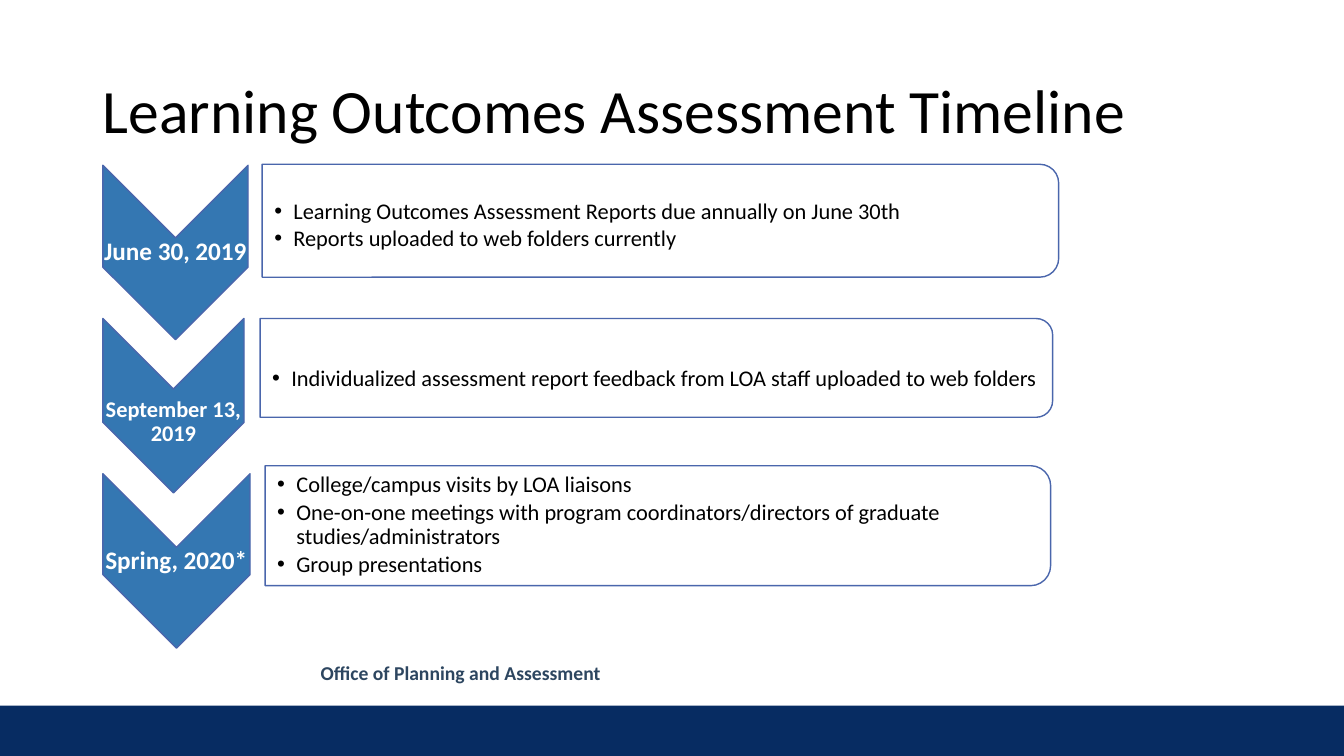
from lxml.etree import SubElement
from pptx import Presentation
from pptx.dml.color import RGBColor
from pptx.enum.shapes import MSO_SHAPE as Shape
from pptx.enum.text import MSO_ANCHOR as Anchor, PP_ALIGN as Align
from pptx.oxml.ns import qn
from pptx.util import Inches, Pt

TITLE = "Learning Outcomes Assessment Timeline"
OFFICE = "Office of Planning and Assessment"

# date, date size, date centre y, arrow top, arrow width,
# card (left, top, width, height), notes centre y, notes
STEPS = [
    ("June 30, 2019", 18, 2.5, 1.64, 1.44, (2.6, 1.63, 7.9, 1.12), 2.24,
     ["Learning Outcomes Assessment Reports due annually on June 30th",
      "Reports uploaded to web folders currently"]),
    ("September 13, 2019", 16, 4.19, 3.16, 1.4, (2.58, 3.16, 7.86, 0.98), 3.76,
     ["Individualized assessment report feedback from LOA staff uploaded to web folders"]),
    ("Spring, 2020*", 18, 5.57, 4.7, 1.46, (2.63, 4.62, 7.79, 1.19), 5.21,
     ["College/campus visits by LOA liaisons",
      "One-on-one meetings with program coordinators/directors of graduate "
      "studies/administrators",
      "Group presentations"]),
]
WIDTH, HEIGHT = 13.33, 7.5
ARROW_LEFT, ARROW_HEIGHT = 1.02, 1.73
BAND_HEIGHT = 0.5
BLUE, EDGE, NAVY, SLATE = "3477B2", "4A66AC", "072C62", "2D4660"
WHITE, BLACK = "FFFFFF", "000000"

deck = Presentation()
deck.slide_width, deck.slide_height = Inches(WIDTH), Inches(HEIGHT)
slide = deck.slides.add_slide(deck.slide_layouts[5])


def color(hex_string):
    return RGBColor.from_string(hex_string)


def add_run(paragraph, text, size, ink, bold=False):
    run = paragraph.add_run()
    run.text = text
    run.font.name, run.font.size, run.font.bold = "Calibri", Pt(size), bold
    run.font.color.rgb = color(ink)


def add_block(kind, left, top, width, height, fill, edge=None, turned=False):
    """Place a shape by its visible box; a turned one is rotated by 90 degrees."""
    w, h = (height, width) if turned else (width, height)
    block = slide.shapes.add_shape(
        kind, Inches(left + (width - w) / 2), Inches(top + (height - h) / 2),
        Inches(w), Inches(h))
    block.rotation = 90 if turned else 0
    block.shadow.inherit = False
    block.fill.solid()
    block.fill.fore_color.rgb = color(fill)
    if edge:
        block.line.color.rgb = color(edge)
        block.line.width = Pt(1)
    else:
        block.line.fill.background()


def add_text(lines, left, middle, width, height, size, ink, bold=False,
             align=Align.LEFT, spacing=0.9, bullets=False):
    box = slide.shapes.add_textbox(Inches(left), Inches(middle - height / 2),
                                   Inches(width), Inches(height))
    frame = box.text_frame
    frame.word_wrap = True
    frame.vertical_anchor = Anchor.MIDDLE
    frame.margin_left = Inches(0.12 if bullets else 0)
    frame.margin_right = frame.margin_top = frame.margin_bottom = 0
    for i, line in enumerate(lines):
        paragraph = frame.add_paragraph() if i else frame.paragraphs[0]
        paragraph.alignment = align
        paragraph.line_spacing = spacing
        if bullets:
            paragraph.space_before = Pt(0.15 * size if i else 0)
            properties = paragraph._p.get_or_add_pPr()
            properties.set("marL", str(Inches(0.19)))
            properties.set("indent", str(-Inches(0.19)))
            SubElement(properties, qn("a:buFont")).set("typeface", "Arial")
            SubElement(properties, qn("a:buChar")).set("char", "•")
        add_run(paragraph, line, size, ink, bold)


# Footer band and office name
add_block(Shape.RECTANGLE, 0, HEIGHT - BAND_HEIGHT, WIDTH, BAND_HEIGHT, NAVY)
add_text([OFFICE], 3.18, 6.67, 5.27, 0.27, 14, SLATE, bold=True, spacing=1.07)

# Title
title = slide.shapes.title
title.left, title.top = Inches(0.92), Inches(0.4)
title.width, title.height = Inches(11.5), Inches(1.45)
title.text_frame.vertical_anchor = Anchor.MIDDLE
heading = title.text_frame.paragraphs[0]
heading.alignment, heading.line_spacing = Align.LEFT, 0.9
add_run(heading, TITLE, 44, BLACK)

# Timeline: an arrow with its date, and a card with its notes
for date, size, date_y, top, arrow_width, card, notes_y, notes in STEPS:
    add_block(Shape.CHEVRON, ARROW_LEFT, top, arrow_width, ARROW_HEIGHT,
              BLUE, EDGE, turned=True)
    add_text([date], ARROW_LEFT, date_y, arrow_width, 0.5, size, WHITE,
             bold=True, align=Align.CENTER)
    add_block(Shape.ROUND_2_SAME_RECTANGLE, *card, WHITE, EDGE, turned=True)
    left, _, width, height = card
    add_text(notes, left, notes_y, width - 0.05, height - 0.1, 16, BLACK,
             bullets=True)

deck.save("out.pptx")
